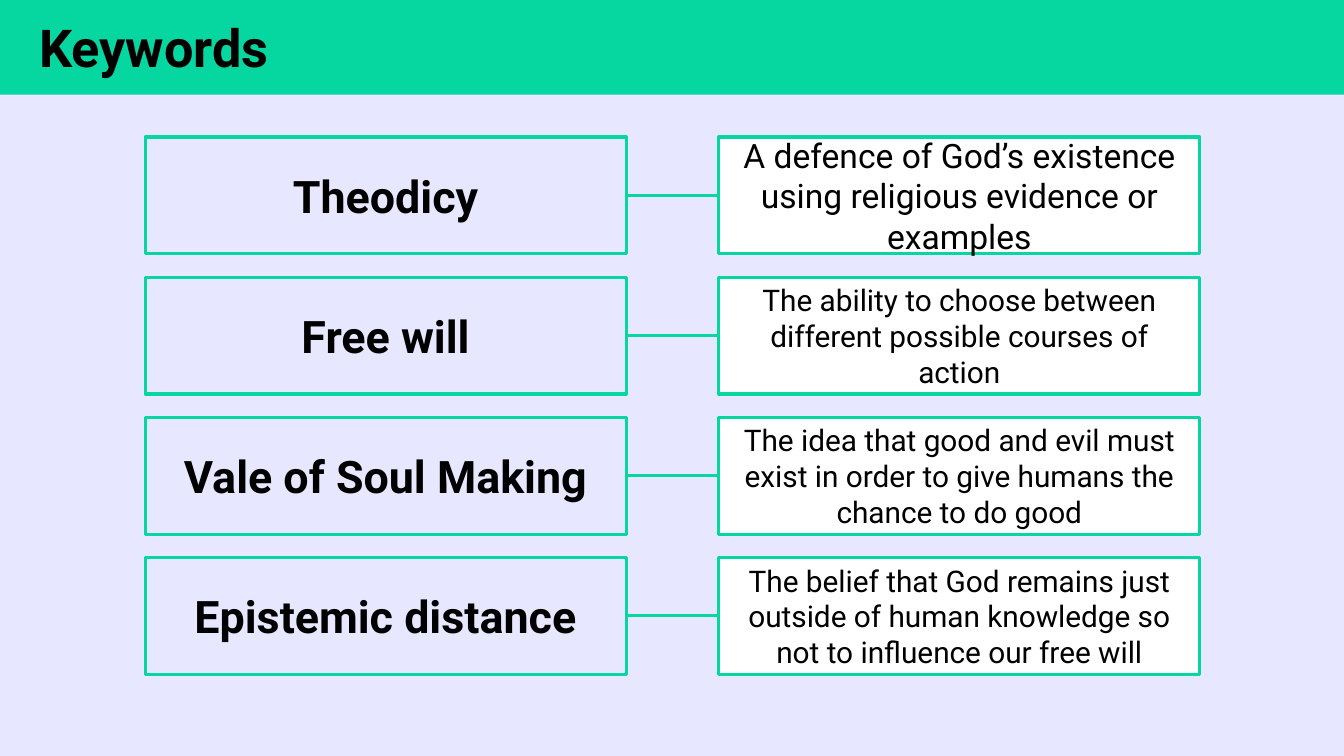
"""Build a slide that links four keywords to their definitions."""
import dataclasses

import lxml.etree
import pptx
import pptx.dml.color
import pptx.enum.shapes
import pptx.enum.text
import pptx.oxml.ns
import pptx.util

TITLE = "Keywords"
TERMS = [
    ("Theodicy", "A defence of God’s existence using religious evidence or examples", 24),
    ("Free will", "The ability to choose between different possible courses of action", 21.3),
    ("Vale of Soul Making",
     "The idea that good and evil must exist in order to give humans the chance to do good", 21.3),
    ("Epistemic distance",
     "The belief that God remains just outside of human knowledge so not to influence our free will", 21.3),
]


@dataclasses.dataclass(frozen=True)
class Theme:
    """Colours, font, type sizes and line width of the slide."""
    back: str = "E7E7FF"
    green: str = "06D6A0"
    white: str = "FFFFFF"
    ink: str = "000000"
    font: str = "Roboto"
    head: float = 37.3
    term: float = 32
    line: float = 2.25


LOOK = Theme()
WIDE, HIGH = 13.33, 7.5
LEFT, TOP = 1.44, 1.36
BOX_W, BOX_H = 4.77, 1.16
COL, ROW = 5.69, 1.39
PAD = 0.13
ALIGN = pptx.enum.text.PP_ALIGN
inch = pptx.util.Inches


def tint(code):
    return pptx.dml.color.RGBColor.from_string(code)


def stroke(line):
    line.color.rgb = tint(LOOK.green)
    line.width = pptx.util.Pt(LOOK.line)


def add_box(slide, area, text, size, bold=False, fill=None, edge=True,
            align=ALIGN.CENTER, inset=PAD):
    box = slide.shapes.add_shape(
        pptx.enum.shapes.MSO_SHAPE.RECTANGLE, *map(inch, area))
    box.shadow.inherit = False
    if fill:
        box.fill.solid()
        box.fill.fore_color.rgb = tint(fill)
    else:
        box.fill.background()
    if edge:
        stroke(box.line)
    else:
        box.line.fill.background()
    frame = box.text_frame
    frame.word_wrap = True
    frame.vertical_anchor = pptx.enum.text.MSO_ANCHOR.MIDDLE
    frame.margin_left = inch(inset)
    frame.margin_top = frame.margin_right = frame.margin_bottom = inch(PAD)
    para = frame.paragraphs[0]
    para.text = text
    para.alignment = align
    para.font.name = LOOK.font
    para.font.size = pptx.util.Pt(size)
    para.font.bold = bold
    para.font.color.rgb = tint(LOOK.ink)
    return box


def join(slide, start, end):
    link = slide.shapes.add_connector(
        pptx.enum.shapes.MSO_CONNECTOR.STRAIGHT, 0, 0, 0, 0)
    link.begin_connect(start, 3)
    link.end_connect(end, 1)
    stroke(link.line)
    lxml.etree.SubElement(
        link._element.spPr, pptx.oxml.ns.qn("a:effectLst"))


def main():
    deck = pptx.Presentation()
    deck.slide_width, deck.slide_height = inch(WIDE), inch(HIGH)
    slide = deck.slides.add_slide(deck.slide_layouts[6])
    slide.background.fill.solid()
    slide.background.fill.fore_color.rgb = tint(LOOK.back)
    add_box(slide, (0, -0.02, WIDE, 0.96), TITLE, LOOK.head, bold=True,
            fill=LOOK.green, edge=False, align=ALIGN.LEFT, inset=3 * PAD)
    for row, (term, sense, size) in enumerate(TERMS):
        top = TOP + row * ROW
        name = add_box(slide, (LEFT, top, BOX_W, BOX_H), term, LOOK.term, bold=True)
        note = add_box(slide, (LEFT + COL, top, BOX_W, BOX_H), sense, size,
                       fill=LOOK.white)
        join(slide, name, note)
    deck.save("out.pptx")


if __name__ == "__main__":
    main()
